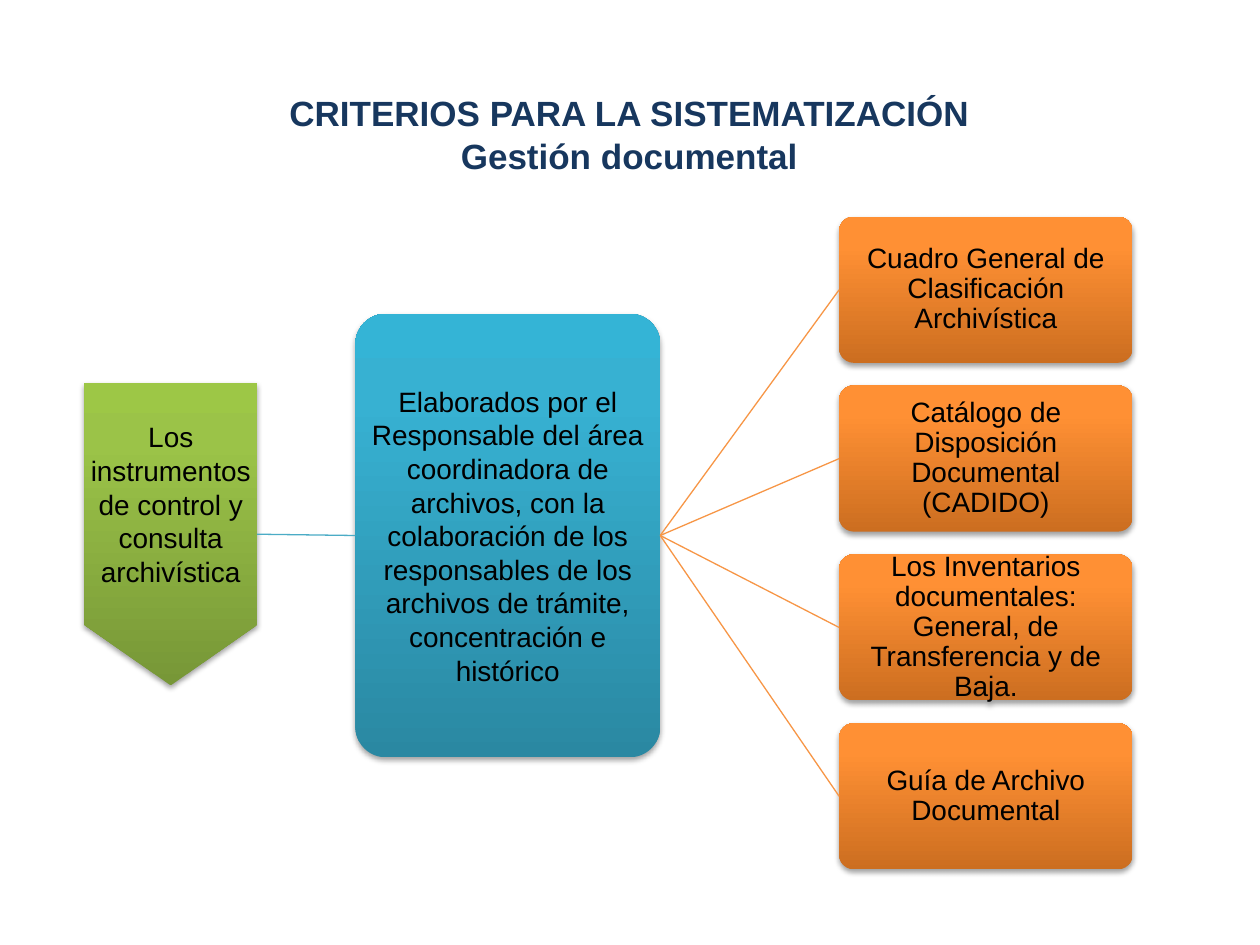
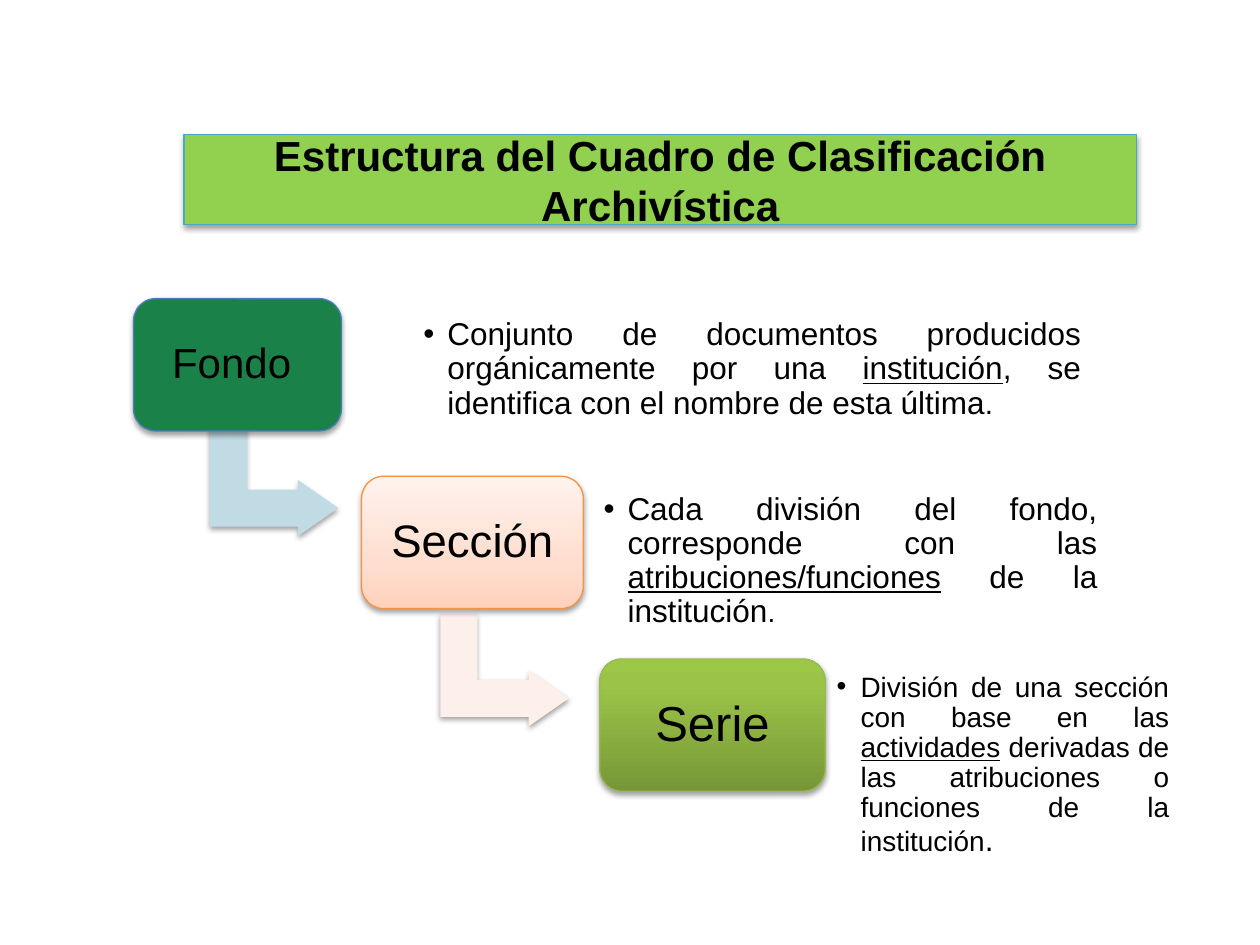
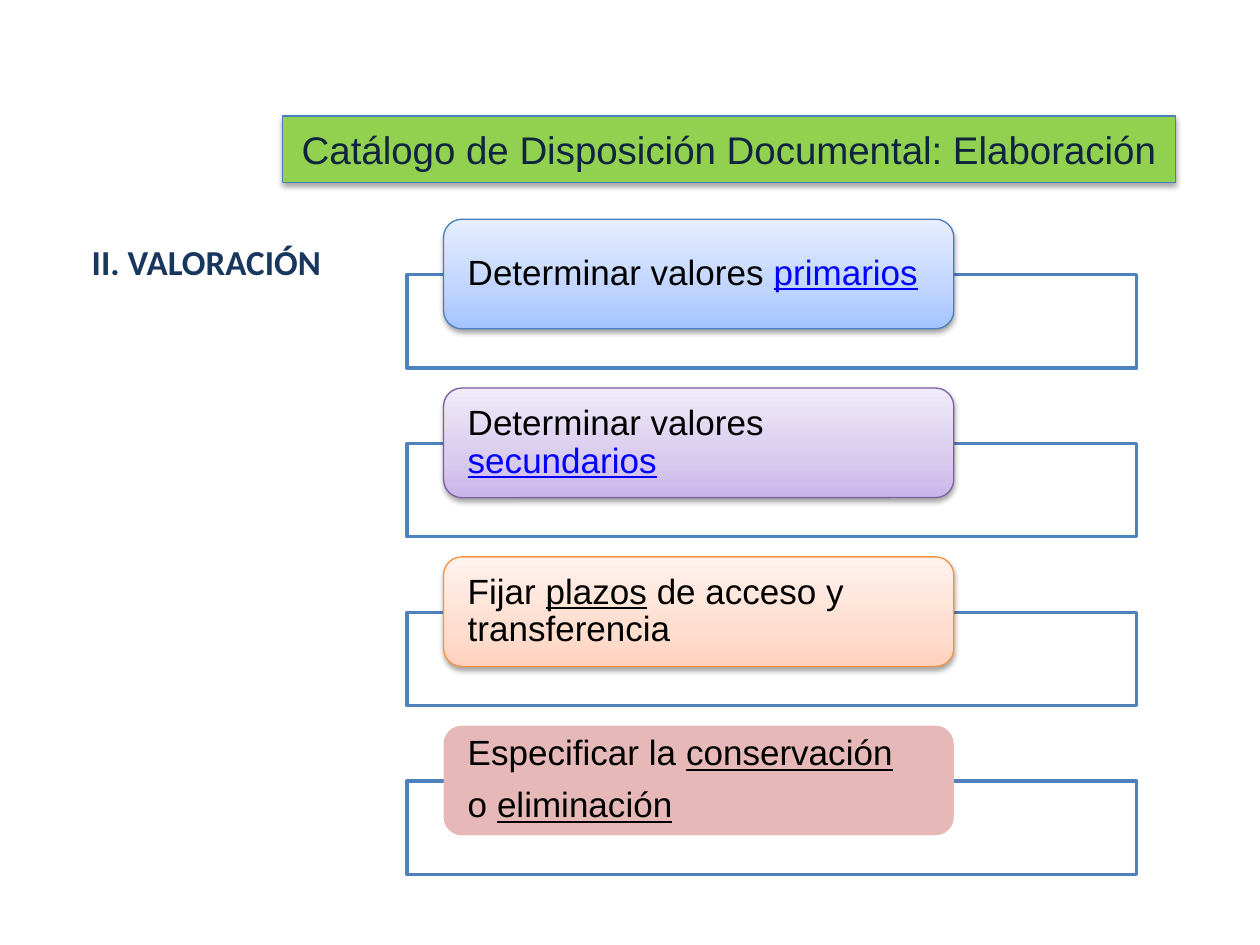
from dataclasses import dataclass
from typing import Any, Optional, Union

from lxml import etree
from pptx import Presentation
from pptx.dml.color import RGBColor
from pptx.enum import shapes, text
from pptx.oxml.ns import qn
from pptx.util import Inches, Pt

Box = tuple[float, float, float, float]
Gradient = tuple[tuple[int, str], ...]
Paint = Union[str, Gradient, None]
MSO, ALIGN, ANCHOR = shapes.MSO_SHAPE, text.PP_ALIGN, text.MSO_ANCHOR

# Shared colours; gradients run from the bottom up
BLACK, WHITE, NAVY, LINK = "000000", "FFFFFF", "17375E", "0000FF"
BAND = "92D050"
GREEN: Gradient = ((0, "779737"), (80, "9BC348"), (100, "9DC746"))
TEAL: Gradient = ((0, "2A88A2"), (80, "37B1D2"), (100, "34B4D6"))
ORANGE: Gradient = ((0, "CC6E20"), (80, "FF9034"), (100, "FF9136"))
PEACH: Gradient = ((0, "FFD2BD"), (35, "FFDED0"), (100, "FFF2ED"))
SKY: Gradient = ((0, "A4C4FF"), (35, "BFD4FF"), (100, "E6EEFF"))
LILAC: Gradient = ((0, "C9B5E8"), (35, "D8CBEE"), (100, "F0EAF9"))


@dataclass(frozen=True)
class Style:
    size: float
    color: str = BLACK
    name: str = "Arial"
    bold: bool = False
    align: Any = ALIGN.CENTER
    spacing: float = 1.0
    after: float = 0
    marked: Optional[str] = None  # colour of the underlined words
    dot: Optional[float] = None  # size of the closing full stop
    bullet: bool = False


@dataclass(frozen=True)
class Step:
    label: str
    box: Box
    fill: Paint
    line: str
    size: float
    inset: float
    note: str
    note_box: Box
    note_size: float
    dot: float
    note_bottom: float = 0.07
    arrow: Optional[tuple[float, float, str]] = None


@dataclass(frozen=True)
class Task:
    label: str
    fill: Paint
    line: Optional[str]
    marked: str = BLACK


def rgb(value: str) -> RGBColor:
    return RGBColor.from_string(value)


def assign(obj: Any, values: dict[str, Any]) -> None:
    for key, value in values.items():
        setattr(obj, key, value)


def place(sp: Any, box: Box) -> None:
    assign(sp, dict(zip(("left", "top", "width", "height"), map(Inches, box))))


def paint(sp: Any, fill: Paint, line: Optional[str] = None, width: float = 0.75,
          shadow: bool = True, alpha: Optional[int] = None) -> None:
    """Give a shape its fill, outline and soft drop shadow."""
    if isinstance(fill, tuple):
        sp.fill.gradient()
        sp.fill.gradient_angle = 90
        stops = sp._element.spPr.find(".//" + qn("a:gsLst"))
        stops.clear()
        for pos, color in fill:
            gs = etree.SubElement(stops, qn("a:gs"), pos=str(pos * 1000))
            etree.SubElement(gs, qn("a:srgbClr"), val=color)
    elif fill:
        sp.fill.solid()
        sp.fill.fore_color.rgb = rgb(fill)
        if alpha:
            clr = sp._element.spPr.find(".//" + qn("a:srgbClr"))
            etree.SubElement(clr, qn("a:alpha"), val=str(alpha * 1000))
    if line:
        sp.line.color.rgb = rgb(line)
        sp.line.width = Pt(width)
    else:
        sp.line.fill.background()
    sp.shadow.inherit = False
    if shadow:
        effects = sp._element.spPr.find(qn("a:effectLst"))
        outer = etree.SubElement(effects, qn("a:outerShdw"), blurRad="40000", dist="22000",
                                 dir="5400000", rotWithShape="0")
        clr = etree.SubElement(outer, qn("a:srgbClr"), val=BLACK)
        etree.SubElement(clr, qn("a:alpha"), val="36000")


def write(sp: Any, content: str, style: Style, insets: tuple[float, ...] = (0.1, 0.05, 0.1, 0.05),
          anchor: Any = ANCHOR.MIDDLE) -> None:
    """Write paragraphs; words between underscores are underlined."""
    tf = sp.text_frame
    assign(tf, {"word_wrap": True, "auto_size": text.MSO_AUTO_SIZE.NONE, "vertical_anchor": anchor})
    sides = ("margin_left", "margin_top", "margin_right", "margin_bottom")
    assign(tf, dict(zip(sides, map(Inches, insets))))
    lines = content.split("\n")
    for n, line in enumerate(lines):
        p = tf.add_paragraph() if n else tf.paragraphs[0]
        if style.bullet:
            p.level = 1
            pPr = p._p.get_or_add_pPr()
            pPr.set("marL", str(Inches(0.19)))
            pPr.set("indent", str(Inches(-0.19)))
            etree.SubElement(pPr, qn("a:buChar"), char="•")
        assign(p, {"alignment": style.align, "line_spacing": style.spacing, "space_before": Pt(0),
                   "space_after": Pt(style.after if n < len(lines) - 1 else 0)})
        parts = [(part, i % 2 == 1, style.size) for i, part in enumerate(line.split("_"))]
        if style.dot:
            last = parts.pop()[0]
            parts += [(last[:-1], False, style.size), (last[-1], False, style.dot)]
        for part, underline, size in parts:
            if part:
                r = p.add_run()
                r.text = part
                assign(r.font, {"name": style.name, "size": Pt(size), "bold": style.bold,
                                "underline": underline})
                r.font.color.rgb = rgb(style.marked if underline and style.marked else style.color)


def add_box(slide: Any, kind: Any, box: Box, adjust: tuple[float, ...] = (), **look: Any) -> Any:
    sp = slide.shapes.add_shape(kind, *map(Inches, box))
    for i, value in enumerate(adjust):
        sp.adjustments[i] = value
    paint(sp, **look)
    return sp


def add_title(slide: Any, content: str, box: Box, style: Style, band_line: Optional[str] = None) -> None:
    sp = slide.shapes.title
    place(sp, box)
    if band_line:
        paint(sp, BAND, band_line)
    write(sp, content, style, anchor=ANCHOR.MIDDLE if band_line else ANCHOR.TOP)


def join(slide: Any, start: Any, end: Any, color: str) -> None:
    c = slide.shapes.add_connector(shapes.MSO_CONNECTOR.STRAIGHT, 0, 0, 0, 0)
    c.begin_connect(start, 3)
    c.end_connect(end, 1)
    c.line.color.rgb = rgb(color)
    c.line.width = Pt(0.75)
    etree.SubElement(c._element.spPr, qn("a:effectLst"))


# Slide 1: instruments tree
INSTRUMENTS = (
    "Cuadro General de Clasificación Archivística",
    "Catálogo de Disposición Documental (CADIDO)",
    "Los Inventarios documentales: General, de Transferencia y de Baja.",
    "Guía de Archivo Documental",
)
PITCH = 1.34


def instruments_slide(prs: Any) -> None:
    slide = prs.slides.add_slide(prs.slide_layouts[5])
    add_title(slide, "CRITERIOS PARA LA SISTEMATIZACIÓN\nGestión documental",
              (0.98, 0.68, 8.03, 0.77), Style(20, NAVY, bold=True))
    tight = (0.01,) * 4
    root = add_box(slide, MSO.FLOWCHART_OFFPAGE_CONNECTOR, (0.67, 3.04, 1.37, 2.4), fill=GREEN)
    write(root, "Los instrumentos de control y consulta archivística", Style(16), tight)
    authors = add_box(slide, MSO.ROUNDED_RECTANGLE, (2.82, 2.49, 2.42, 3.52), (0.1,), fill=TEAL)
    write(authors, "Elaborados por el Responsable del área coordinadora de archivos, con la colaboración "
          "de los responsables de los archivos de trámite, concentración e histórico", Style(16), tight)
    join(slide, root, authors, "4BACC6")
    for i, label in enumerate(INSTRUMENTS):
        leaf = add_box(slide, MSO.ROUNDED_RECTANGLE, (6.66, 1.72 + i * PITCH, 2.33, 1.16), (0.1,),
                       fill=ORANGE)
        write(leaf, label, Style(16, spacing=0.9), tight)
        join(slide, authors, leaf, "F79646")


# Slide 2: descending levels with their definitions
STEPS = (
    Step("Fondo ", (1.06, 2.37, 1.65, 1.05), "1A8249", "4B7EBC", 24, 0.1,
         "Conjunto de documentos producidos orgánicamente por una _institución_, "
         "se identifica con el nombre de esta última.",
         (3.29, 2.51, 5.36, 0.85), 18, 17, arrow=(1.73, 3.3, "C1DBE5")),
    Step("Sección", (2.87, 3.78, 1.76, 1.05), PEACH, "F69240", 26, 0.11,
         "Cada división del fondo, corresponde con las _atribuciones/funciones_ de la institución.",
         (4.72, 4.03, 4.06, 0.85), 18, 16, arrow=(3.56, 4.81, "FDEFE9")),
    Step("Serie", (4.76, 5.23, 1.79, 1.05), GREEN, "98B955", 28, 0.12,
         "División de una sección con base en las _actividades_ derivadas de las atribuciones "
         "o funciones de la institución.",
         (6.57, 5.8, 2.78, 0.85), 16, 18, note_bottom=0.37),
)


def structure_slide(prs: Any) -> None:
    slide = prs.slides.add_slide(prs.slide_layouts[4])
    add_title(slide, "Estructura del Cuadro de Clasificación Archivística",
              (1.46, 1.07, 7.56, 0.71), Style(24, bold=True), "46AAC5")
    notes = list(slide.placeholders)[1:]
    for step, note in zip(STEPS, notes):
        if step.arrow:
            left, top, color = step.arrow
            arrow = add_box(slide, MSO.BENT_UP_ARROW, (left, top, 0.89, 1.02), (0.33, 0.25, 0.36),
                            fill=color)
            arrow.rotation = 90
        sp = add_box(slide, MSO.ROUNDED_RECTANGLE, step.box, fill=step.fill, line=step.line)
        write(sp, step.label, Style(step.size, spacing=0.9), (step.inset,) * 4)
        place(note, step.note_box)
        write(note, step.note, Style(step.note_size, align=ALIGN.JUSTIFY, spacing=0.9,
                                     dot=step.dot, bullet=True),
              (0.07, 0.07, 0.07, step.note_bottom))
    for spare in notes[len(STEPS):]:
        spare._element.getparent().remove(spare._element)


# Slide 3: appraisal tasks
TASKS = (
    Task("Determinar valores _primarios_", SKY, "4B7EBC", LINK),
    Task("Determinar valores _secundarios_", LILAC, "7D60A0", LINK),
    Task("Fijar _plazos_ de acceso y transferencia", PEACH, "F69240"),
    Task("Especificar la _conservación_\no _eliminación_", "E6B9B8", None),
)


def appraisal_slide(prs: Any) -> None:
    slide = prs.slides.add_slide(prs.slide_layouts[5])
    add_title(slide, "Catálogo de Disposición Documental: Elaboración",
              (2.24, 0.92, 7.09, 0.53), Style(22, "0F243E"), "4B7EBC")
    heading = add_box(slide, MSO.RECTANGLE, (0.63, 1.86, 2.6, 0.74), fill=WHITE, shadow=False)
    write(heading, "II. VALORACIÓN", Style(20, NAVY, "Calibri", True, ALIGN.LEFT), anchor=ANCHOR.TOP)
    for i, task in enumerate(TASKS):
        top = 1.74 + i * PITCH
        add_box(slide, MSO.RECTANGLE, (3.23, top + 0.44, 5.79, 0.74), fill=WHITE, line="4F81BD",
                width=2, shadow=False, alpha=90)
        sp = add_box(slide, MSO.ROUNDED_RECTANGLE, (3.52, top, 4.05, 0.87), fill=task.fill,
                     line=task.line, shadow=task.line is not None)
        write(sp, task.label, Style(20, align=ALIGN.LEFT, spacing=0.9, after=8, marked=task.marked),
              (0.15, 0, 0.15, 0))


def main() -> None:
    prs = Presentation()
    prs.slide_width, prs.slide_height = Inches(10), Inches(7.5)
    instruments_slide(prs)
    structure_slide(prs)
    appraisal_slide(prs)
    prs.save("out.pptx")


if __name__ == "__main__":
    main()
